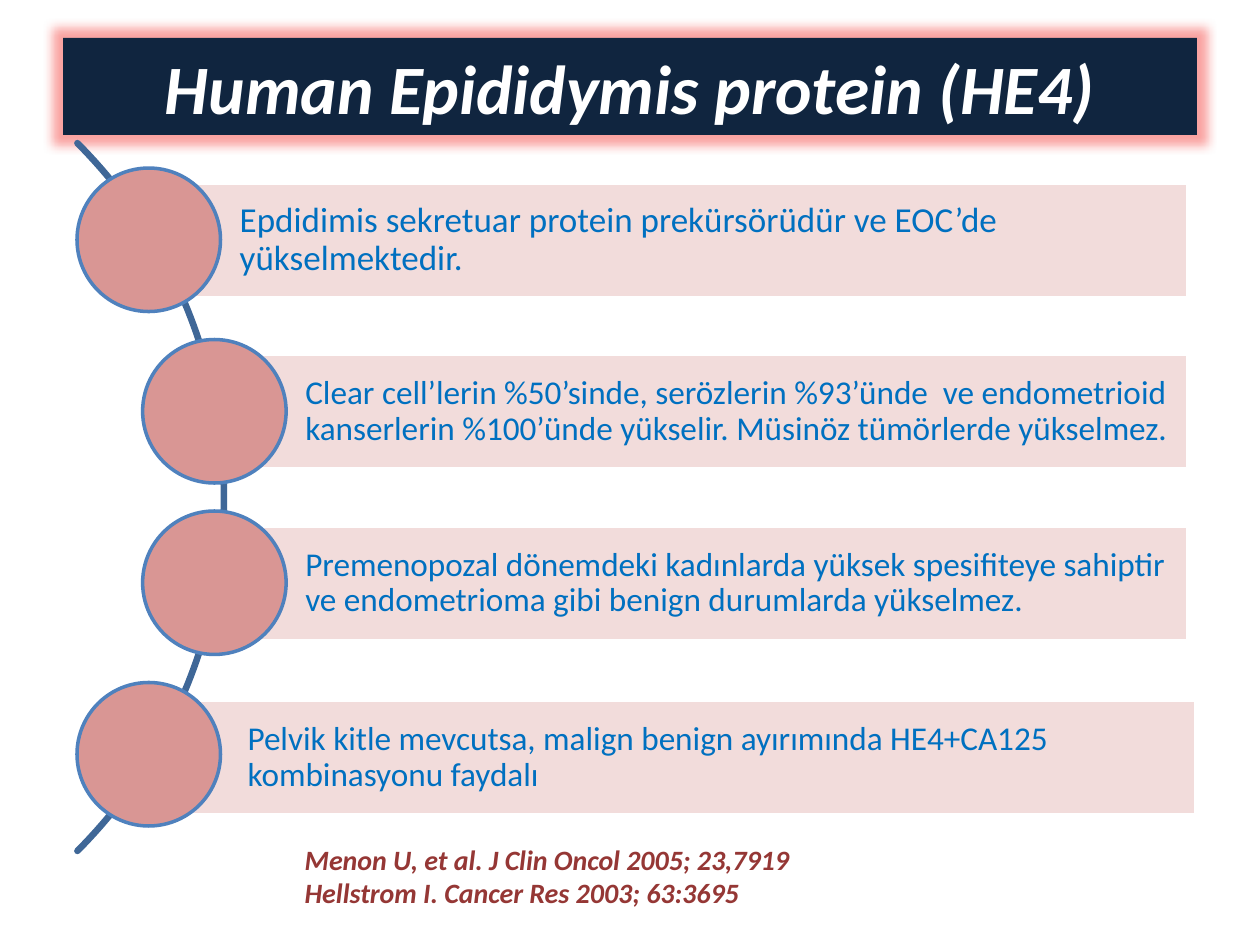
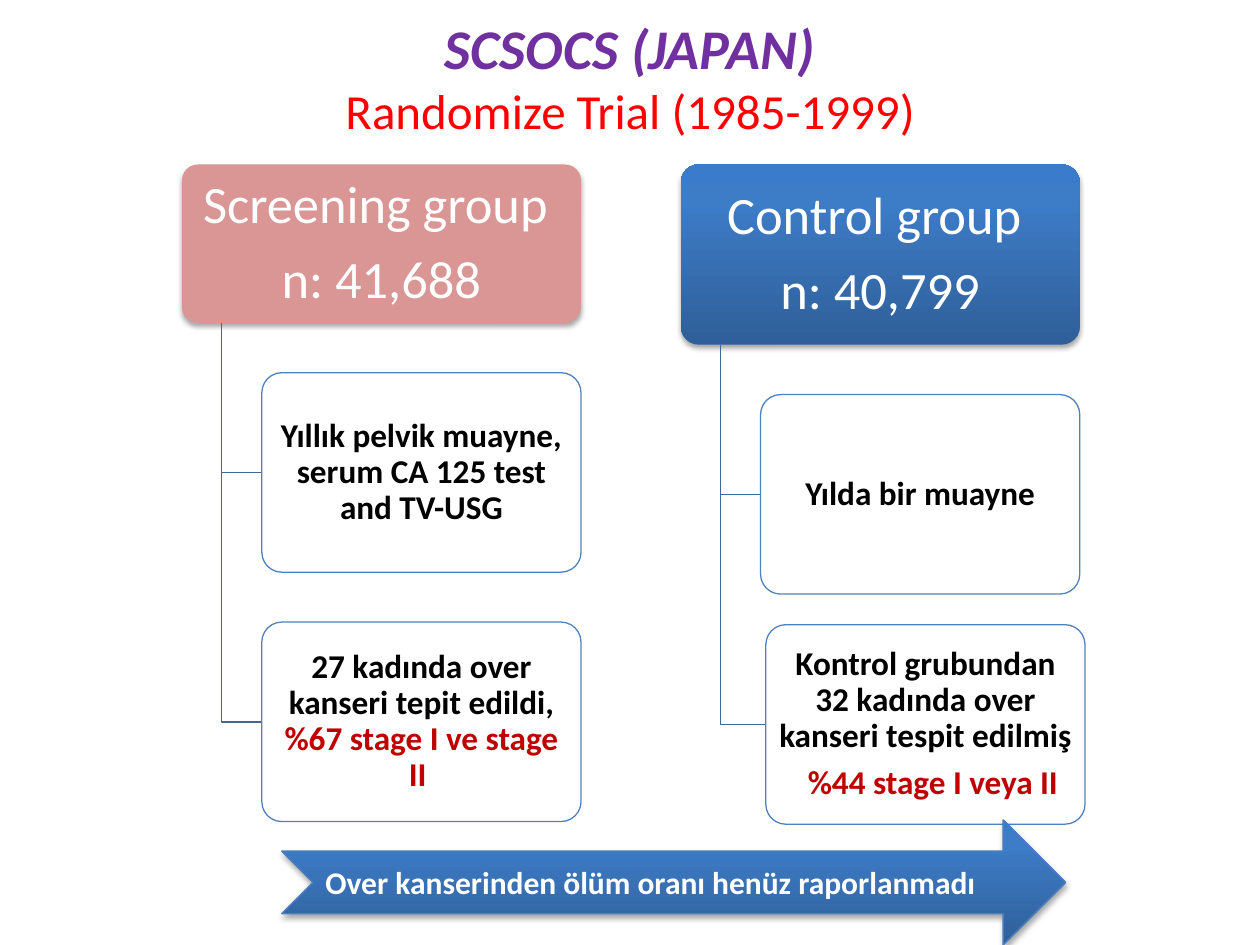
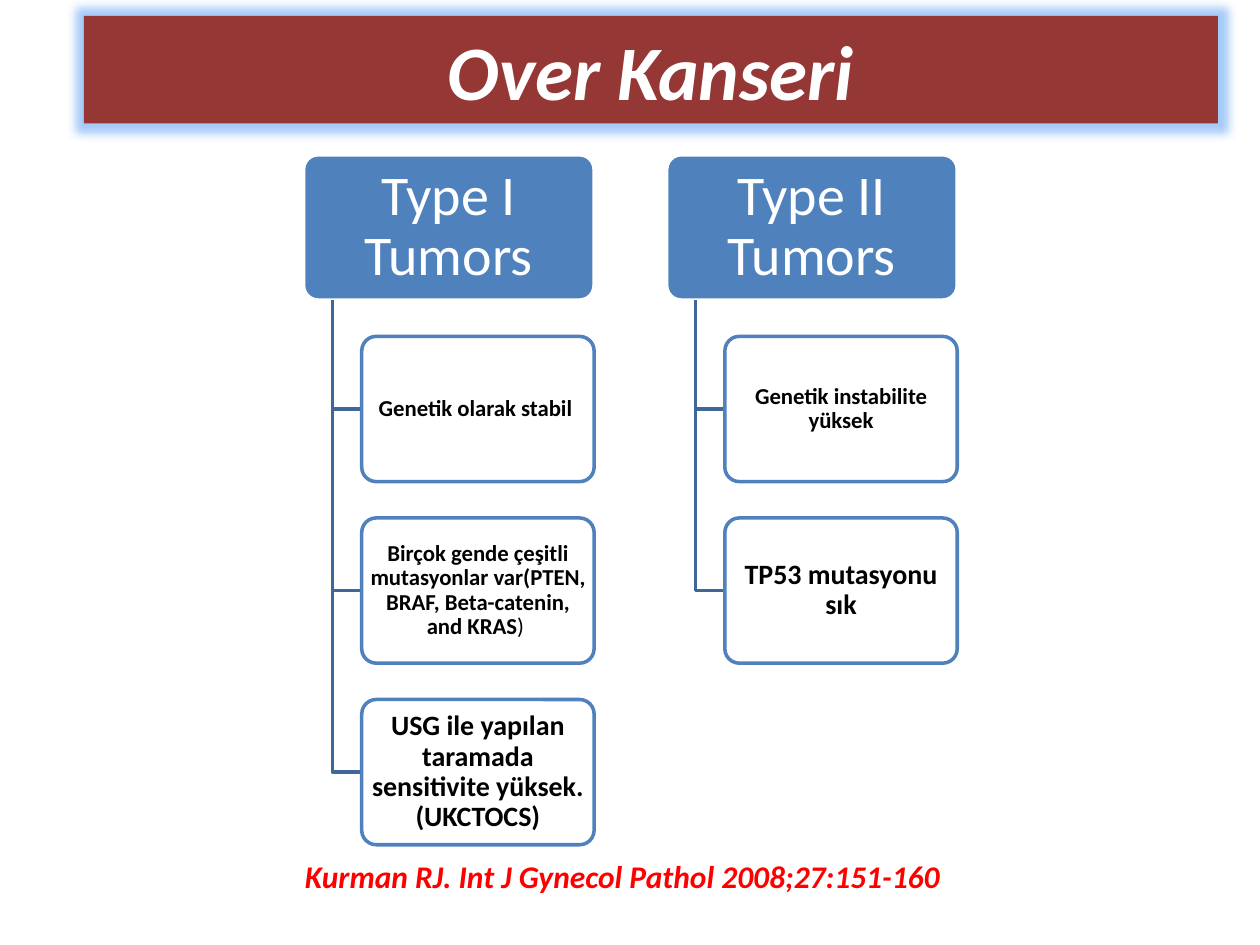
from dataclasses import dataclass, field
from math import cos, radians, sin

from lxml.etree import SubElement
from pptx import Presentation
from pptx.dml.color import RGBColor
from pptx.enum.shapes import MSO_SHAPE
from pptx.enum.text import MSO_ANCHOR, MSO_AUTO_SIZE, PP_ALIGN
from pptx.oxml.ns import qn
from pptx.util import Pt

# Shared colours and text formats
WHITE, BLACK = "FFFFFF", "000000"
BLUE, DARK_BLUE, NAVY = "4F81BD", "3F6797", "10253F"
ROSE, PALE_ROSE, MAROON = "D99694", "F2DCDB", "953735"
RED, DARK_RED, PURPLE, TEXT_BLUE = "FF0000", "C00000", "7030A0", "0070C0"
GRADIENT = [(0, "2F5F99"), (80, "3D7CC7"), (100, "3A7CCB")]
FONT = "Calibri"
BOLD_ITALIC = {"bold": True, "italic": True}
LEFT, CENTER = PP_ALIGN.LEFT, PP_ALIGN.CENTER
DEFAULT_INSETS = (7.2, 3.6, 7.2, 3.6)


@dataclass
class Run:
    text: str
    fmt: dict = field(default_factory=dict)


@dataclass
class Para:
    runs: list[Run]
    indent: float = 0


@dataclass
class Step:
    text: str
    size: float
    circle_left: float
    dx: float = 0
    dy: float = 0


@dataclass
class Node:
    paras: list[Para]
    size: float
    dx: float = 0
    dy: float = 0


@dataclass
class Tree:
    left: float
    head_height: float
    head: list[Para]
    fill: str | list
    nodes: list[Node]


@dataclass
class TreeStyle:
    top: float
    width: float
    head_size: float
    head_line: str | None
    line_width: float
    head_insets: tuple
    node_insets: tuple
    shadow: bool


def one(text: str, **fmt) -> Para:
    return Para([Run(text, fmt)])


def rgb(value: str) -> RGBColor:
    return RGBColor.from_string(value)


def add_color(parent, value: str, alpha: float = 100) -> None:
    clr = SubElement(parent, qn("a:srgbClr"), val=value)
    if alpha < 100:
        SubElement(clr, qn("a:alpha"), val=str(alpha * 1000))


def add_effect(sp, kind: str, color: str, alpha: int, **attrs) -> None:
    sp.shadow.inherit = False
    effects = sp._element.spPr.find(qn("a:effectLst"))
    effect = SubElement(effects, qn(f"a:{kind}"), {k: str(v) for k, v in attrs.items()})
    add_color(effect, color, alpha)


def add_shadow(sp) -> None:
    add_effect(sp, "outerShdw", BLACK, 35, blurRad=Pt(3.1), dist=Pt(1.8),
               dir=5400000, rotWithShape=0)


def paint(sp, fill: str | list | None, line: str | None = None,
          width: float = 0.75, alpha: int = 100) -> None:
    sp.shadow.inherit = False
    if fill is None:
        sp.fill.background()
    elif isinstance(fill, list):
        sp.fill.gradient()
        sp.fill.gradient_angle = 90
        stops = sp._element.spPr.find(qn("a:gradFill")).find(qn("a:gsLst"))
        for stop in list(stops):
            stops.remove(stop)
        for pos, color in fill:
            add_color(SubElement(stops, qn("a:gs"), pos=str(pos * 1000)), color)
    else:
        sp.fill.solid()
        sp.fill.fore_color.rgb = rgb(fill)
        if alpha < 100:
            clr = sp._element.spPr.find(qn("a:solidFill")).find(qn("a:srgbClr"))
            SubElement(clr, qn("a:alpha"), val=str(alpha * 1000))
    if line:
        sp.line.color.rgb = rgb(line)
        sp.line.width = Pt(width)
    else:
        sp.line.fill.background()


def write(sp, paras: list[Para], base: dict, align=CENTER,
          insets: tuple = DEFAULT_INSETS, spaced: bool = False) -> None:
    tf = sp.text_frame
    frame = {"word_wrap": True, "auto_size": MSO_AUTO_SIZE.NONE,
             "vertical_anchor": MSO_ANCHOR.MIDDLE}
    sides = ("margin_left", "margin_top", "margin_right", "margin_bottom")
    frame.update(zip(sides, map(Pt, insets)))
    for name, value in frame.items():
        setattr(tf, name, value)
    for i, para in enumerate(paras):
        p = tf.add_paragraph() if i else tf.paragraphs[0]
        p.alignment = align
        if spaced:
            p.line_spacing = 0.9
            p.space_after = Pt(0.35 * base["size"])
        if para.indent:
            p._p.get_or_add_pPr().set("marL", str(Pt(para.indent)))
        for run in para.runs:
            r = p.add_run()
            r.text = run.text.rstrip("\n")
            fmt = {"name": FONT, **base, **run.fmt}
            r.font.color.rgb = rgb(fmt.pop("color"))
            fmt["size"] = Pt(fmt["size"])
            for name, value in fmt.items():
                setattr(r.font, name, value)
            if run.text.endswith("\n"):
                p.add_line_break()


def add_box(s, kind, left: float, top: float, width: float, height: float):
    return s.shapes.add_shape(kind, Pt(left), Pt(top), Pt(width), Pt(height))


def add_text(s, box: tuple, paras: list[Para], base: dict, align=CENTER) -> None:
    write(s.shapes.add_textbox(*map(Pt, box)), paras, base, align)


def add_path(s, points: list[tuple], color: str, width: float):
    start, *rest = [(Pt(x), Pt(y)) for x, y in points]
    builder = s.shapes.build_freeform(*start)
    builder.add_line_segments(rest, close=False)
    sp = builder.convert_to_shape()
    paint(sp, None, color, width)
    return sp


def add_slide(prs, box: tuple, runs: list[Run], base: dict,
              fill: str | None = None, glow: str | None = None):
    s = prs.slides.add_slide(prs.slide_layouts[5])
    title = s.shapes.title
    title.left, title.top, title.width, title.height = map(Pt, box)
    write(title, [Para(runs)], base)
    if fill:
        paint(title, fill)
    if glow:
        add_effect(title, "glow", glow, 40, rad=Pt(11))
    return s


def add_step(s, step: Step, top: float) -> None:
    size, bar_right = 82, 679
    middle = step.circle_left + size / 2
    bar = add_box(s, MSO_SHAPE.RECTANGLE, middle + step.dx, top + 8.5 + step.dy,
                  bar_right - middle, 65.5)
    paint(bar, PALE_ROSE, WHITE, 2)
    write(bar, [one(step.text)], {"size": step.size, "color": TEXT_BLUE}, LEFT,
          (52, 4, 4, 4), spaced=True)
    circle = add_box(s, MSO_SHAPE.OVAL, step.circle_left, top, size, size)
    paint(circle, ROSE, BLUE, 2)


def add_rounded(s, *box: float):
    sp = add_box(s, MSO_SHAPE.ROUNDED_RECTANGLE, *box)
    sp.adjustments[0] = 0.1
    return sp


def add_tree(s, tree: Tree, style: TreeStyle) -> None:
    # Every node is half as high as the head is wide, with a quarter of that as gap
    height = style.width / 2
    gap = height / 4
    head_bottom = style.top + tree.head_height
    trunk = tree.left + style.width * 0.1
    head = add_rounded(s, tree.left, style.top, style.width, tree.head_height)
    paint(head, tree.fill, style.head_line, style.line_width)
    if style.shadow:
        add_shadow(head)
    write(head, tree.head, {"size": style.head_size, "color": WHITE},
          insets=style.head_insets, spaced=True)
    for i, node in enumerate(tree.nodes):
        left = tree.left + style.width * 0.2 + node.dx
        top = head_bottom + gap + i * (height + gap) + node.dy
        middle = top + height / 2
        add_path(s, [(trunk, head_bottom), (trunk, middle), (left, middle)],
                 DARK_BLUE, style.line_width)
        sp = add_rounded(s, left, top, style.width * 0.8, height)
        paint(sp, WHITE, BLUE, style.line_width, alpha=90)
        write(sp, node.paras, {"size": node.size, "color": BLACK, "bold": True},
              insets=style.node_insets, spaced=True)


def build_he4(prs) -> None:
    s = add_slide(prs, (36, 21.6, 648, 55.5), [Run("Human Epididymis protein (HE4)")],
                  {"size": 39.6, "color": WHITE, **BOLD_ITALIC}, NAVY, "F31A15")
    # Arc behind the circles
    cx, cy, radius = -158, 284, 286
    angles = [radians(a) for a in range(-45, 46)]
    arc = add_path(s, [(cx + radius * cos(a), cy + radius * sin(a)) for a in angles],
                   DARK_BLUE, 3.75)
    arc._element.spPr.find(qn("a:ln")).set("cap", "rnd")
    # Bars with circles
    outer, inner = 44, 81.5
    steps = [
        Step("Epdidimis sekretuar protein prekürsörüdür ve EOC’de yükselmektedir.",
             20, outer),
        Step("Clear cell’lerin %50’sinde, serözlerin %93’ünde  ve endometrioid "
             "kanserlerin %100’ünde yükselir. Müsinöz tümörlerde yükselmez.", 19, inner),
        Step("Premenopozal dönemdeki kadınlarda yüksek spesifiteye sahiptir "
             "ve endometrioma gibi benign durumlarda yükselmez.", 19, inner),
        Step("Pelvik kitle mevcutsa, malign benign ayırımında HE4+CA125 "
             "kombinasyonu faydalı", 19, outer, 4.5, 1.5),
    ]
    for i, step in enumerate(steps):
        add_step(s, step, 96 + 98 * i)
    # References
    add_text(s, (167, 480, 516, 41),
             [one("Menon U, et al. J Clin Oncol 2005; 23,7919"),
              one("Hellstrom I. Cancer Res 2003; 63:3695")],
             {"size": 16, "color": MAROON, **BOLD_ITALIC}, LEFT)


def build_trial(prs) -> None:
    s = add_slide(prs, (36, 21.6, 648, 44),
                  [Run("SCSOCS (JAPAN)\n", {"size": 32, "color": PURPLE, **BOLD_ITALIC}),
                   Run("Randomize Trial (1985-1999)")],
                  {"size": 28, "color": RED, "bold": False, "italic": False})
    # Trial arms
    style = TreeStyle(94, 228, 30, None, 0.75, (4.3, 2.9, 4.3, 2.9),
                      (2.9, 2.2, 2.9, 2.2), True)
    trees = [
        Tree(104, 90.5, [one("Screening group "), one("n: 41,688")], ROSE, [
            Node([one("Yıllık pelvik muayne, serum CA 125 test and TV-USG")], 19),
            Node([Para([Run("27 kadında over kanseri tepit edildi, "),
                        Run("%67 stage I ve stage II ", {"color": DARK_RED})])], 19),
        ]),
        Tree(389, 103, [one("Control group "), one("n: 40,799")], GRADIENT, [
            Node([one("Yılda bir muayne")], 19),
            Node([one("Kontrol grubundan 32 kadında over kanseri tespit edilmiş"),
                  Para([Run("%44 stage I veya II", {"color": DARK_RED})], 8.6)],
                 19, 3, -11),
        ]),
    ]
    for tree in trees:
        add_tree(s, tree, style)
    # Conclusion arrow
    arrow = add_box(s, MSO_SHAPE.NOTCHED_RIGHT_ARROW, 161, 468.5, 448, 71.5)
    paint(arrow, GRADIENT, "4B7EBC")
    add_shadow(arrow)
    write(arrow, [one("Over kanserinden ölüm oranı henüz raporlanmadı")],
          {"size": 18, "color": WHITE, "bold": True}, LEFT)


def build_tumor_types(prs) -> None:
    s = add_slide(prs, (48, 9, 648, 61.5), [Run("Over Kanseri")],
                  {"size": 44, "color": WHITE, **BOLD_ITALIC}, MAROON, "1C7CEF")
    # Tumour types
    style = TreeStyle(88.5, 166, 32, WHITE, 2, (5, 2.9, 5, 2.9),
                      (2.2, 1.4, 2.2, 1.4), False)
    trees = [
        Tree(173.5, 83, [one("Type I Tumors")], BLUE, [
            Node([one("Genetik olarak stabil ")], 13),
            Node([Para([Run("Birçok gende çeşitli mutasyonlar var(PTEN, BRAF, "
                            "Beta-catenin, and KRAS"),
                        Run(") ", {"bold": False})])], 13),
            Node([one("USG ile yapılan taramada sensitivite yüksek. (UKCTOCS)")], 16),
        ]),
        Tree(381, 83, [one("Type II Tumors")], BLUE, [
            Node([one("Genetik instabilite yüksek")], 13),
            Node([one("TP53 mutasyonu sık")], 16),
        ]),
    ]
    for tree in trees:
        add_tree(s, tree, style)
    # Reference
    add_text(s, (140.5, 485.5, 430.5, 30),
             [one("Kurman RJ. Int J Gynecol Pathol 2008;27:151-160")],
             {"size": 18, "color": RED, **BOLD_ITALIC})


def main() -> None:
    prs = Presentation()
    prs.slide_width, prs.slide_height = Pt(720), Pt(540)
    for build in (build_he4, build_trial, build_tumor_types):
        build(prs)
    prs.save("out.pptx")


if __name__ == "__main__":
    main()
